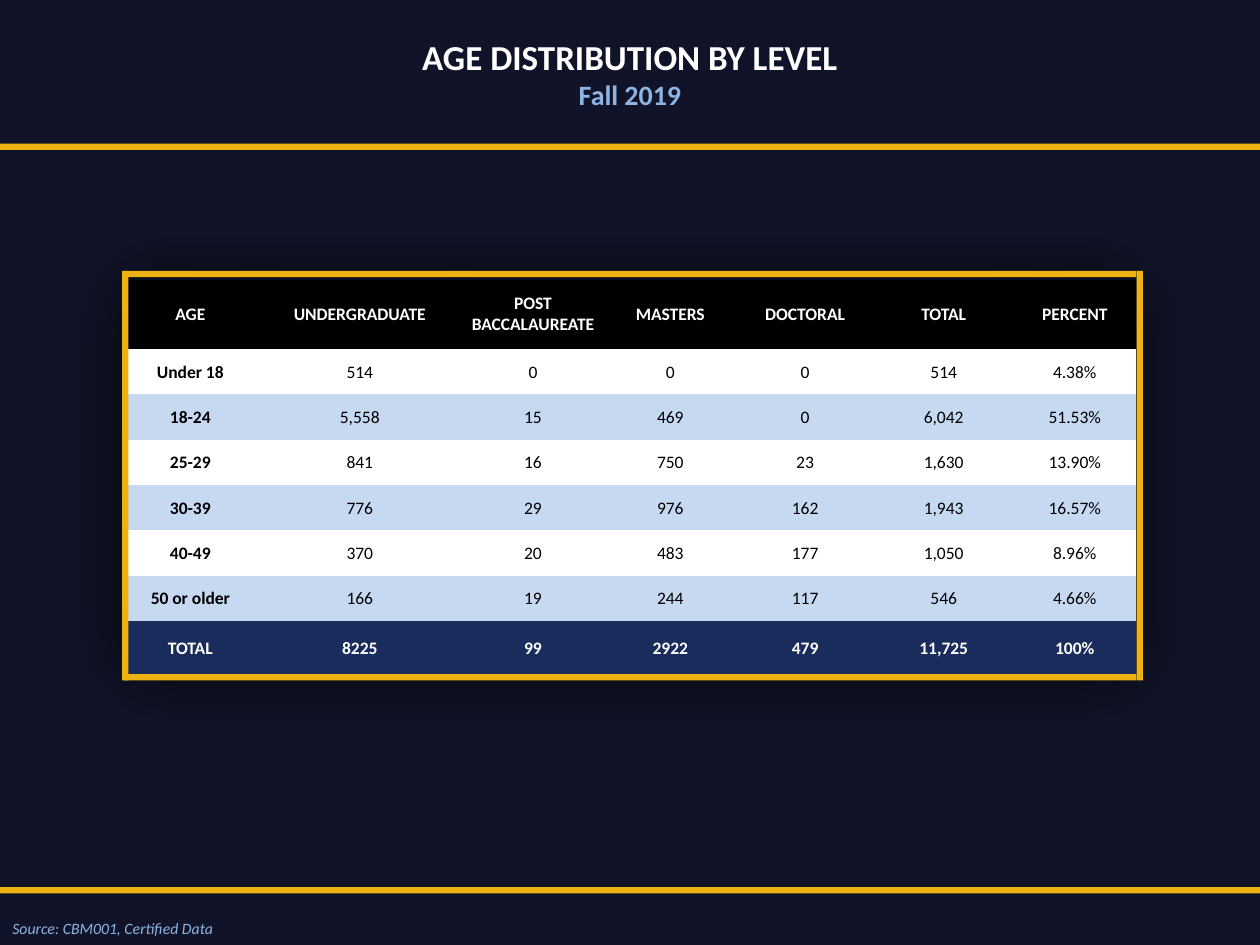
import pptx
import pptx.util
import pptx.dml.color
import pptx.enum.shapes
import pptx.enum.text
import pptx.oxml
import pptx.oxml.ns

Inches = pptx.util.Inches
CENTER = pptx.enum.text.PP_ALIGN.CENTER
LEFT = pptx.enum.text.PP_ALIGN.LEFT
GOLD, SKY, WHITE, BLACK = "EEB211", "8EB4E3", "FFFFFF", "000000"


def paint(fill, shade):
    fill.solid()
    fill.fore_color.rgb = pptx.dml.color.RGBColor.from_string(shade)


def write(para, text, shade, align=CENTER, **style):
    para.alignment = align
    run = para.add_run()
    run.text = text
    paint(run.font.fill, shade)
    for name, value in {"name": "Calibri", **style}.items():
        setattr(run.font, name, value)


deck = pptx.Presentation()
deck.slide_width, deck.slide_height = Inches(10), Inches(7.5)
slide = deck.slides.add_slide(deck.slide_layouts[6])
paint(slide.background.fill, "111428")

# Title and subtitle
title = slide.shapes.add_textbox(Inches(0), Inches(0.23), Inches(10), Inches(1.01))
frame = title.text_frame
frame.word_wrap = True
write(frame.paragraphs[0], "AGE DISTRIBUTION BY LEVEL", WHITE,
      size=pptx.util.Pt(20), bold=True)
write(frame.add_paragraph(), "Fall 2019", SKY, size=pptx.util.Pt(16), bold=True)

# Source note
note = slide.shapes.add_textbox(Inches(0), Inches(7.24), Inches(1.8), Inches(0.25))
note.text_frame.word_wrap = False
write(note.text_frame.paragraphs[0], "Source: CBM001, Certified Data", SKY, LEFT,
      size=pptx.util.Pt(9), italic=True)

# Age table
rows = [
    ["AGE", "UNDERGRADUATE", "POST BACCALAUREATE", "MASTERS", "DOCTORAL", "TOTAL", "PERCENT"],
    ["Under 18", "514", "0", "0", "0", "514", "4.38%"],
    ["18-24", "5,558", "15", "469", "0", "6,042", "51.53%"],
    ["25-29", "841", "16", "750", "23", "1,630", "13.90%"],
    ["30-39", "776", "29", "976", "162", "1,943", "16.57%"],
    ["40-49", "370", "20", "483", "177", "1,050", "8.96%"],
    ["50 or older", "166", "19", "244", "117", "546", "4.66%"],
    ["TOTAL", "8225", "99", "2922", "479", "11,725", "100%"],
]
widths = [1.08, 1.61, 1.14, 1.04, 1.1, 1.1, 0.98]
heights = [0.55] + [0.36] * 6 + [0.44]
fills = [BLACK] + [WHITE, "C6D9F1"] * 3 + ["1A2C5C"]
table = slide.shapes.add_table(len(rows), len(widths), Inches(0.97), Inches(2.22),
                               Inches(8.05), Inches(3.15)).table
for col, width in zip(table.columns, widths):
    col.width = Inches(width)
for r, (row, height, shade) in enumerate(zip(rows, heights, fills)):
    table.rows[r].height = Inches(height)
    edge = r in (0, len(rows) - 1)
    pad = 0.05 if edge else 0.01
    form = {
        "vertical_anchor": pptx.enum.text.MSO_ANCHOR.MIDDLE,
        "margin_left": Inches(pad),
        "margin_right": Inches(pad),
        "margin_top": Inches(pad),
        "margin_bottom": Inches(0.05 if edge else 0),
    }
    for c, text in enumerate(row):
        cell = table.cell(r, c)
        for name, value in form.items():
            setattr(cell, name, value)
        paint(cell.fill, shade)
        write(cell.text_frame.paragraphs[0], text, WHITE if edge else BLACK,
              size=pptx.util.Pt(10), bold=edge or c == 0)

# Plain table style with a soft dark shadow
props = table._tbl.tblPr
props.find(pptx.oxml.ns.qn("a:tableStyleId")).text = "{2D5ABB26-0587-4C30-8999-92F81FD0307C}"
props.insert(0, pptx.oxml.parse_xml(
    f'<a:effectLst {pptx.oxml.ns.nsdecls("a")}>'
    f'<a:outerShdw blurRad="{Inches(0.6)}" dist="0" algn="ctr" rotWithShape="0">'
    '<a:srgbClr val="000000"><a:alpha val="70000"/></a:srgbClr>'
    '</a:outerShdw></a:effectLst>'))

# Gold rules across the slide, then the frame around the table
thick = 0.05
bars = [
    (0, 7.04, 10, thick),
    (0, 1.14, 10, thick),
    (0.99, 2.15, 8.03, thick),
    (0.99, 5.35, 8.03, thick),
    (0.97, 2.15, thick, 3.25),
    (9.02, 2.15, thick, 3.25),
]
for box in bars:
    bar = slide.shapes.add_shape(pptx.enum.shapes.MSO_SHAPE.RECTANGLE,
                                 *(Inches(n) for n in box))
    bar.shadow.inherit = False
    paint(bar.fill, GOLD)
    bar.line.fill.background()

deck.save("out.pptx")
